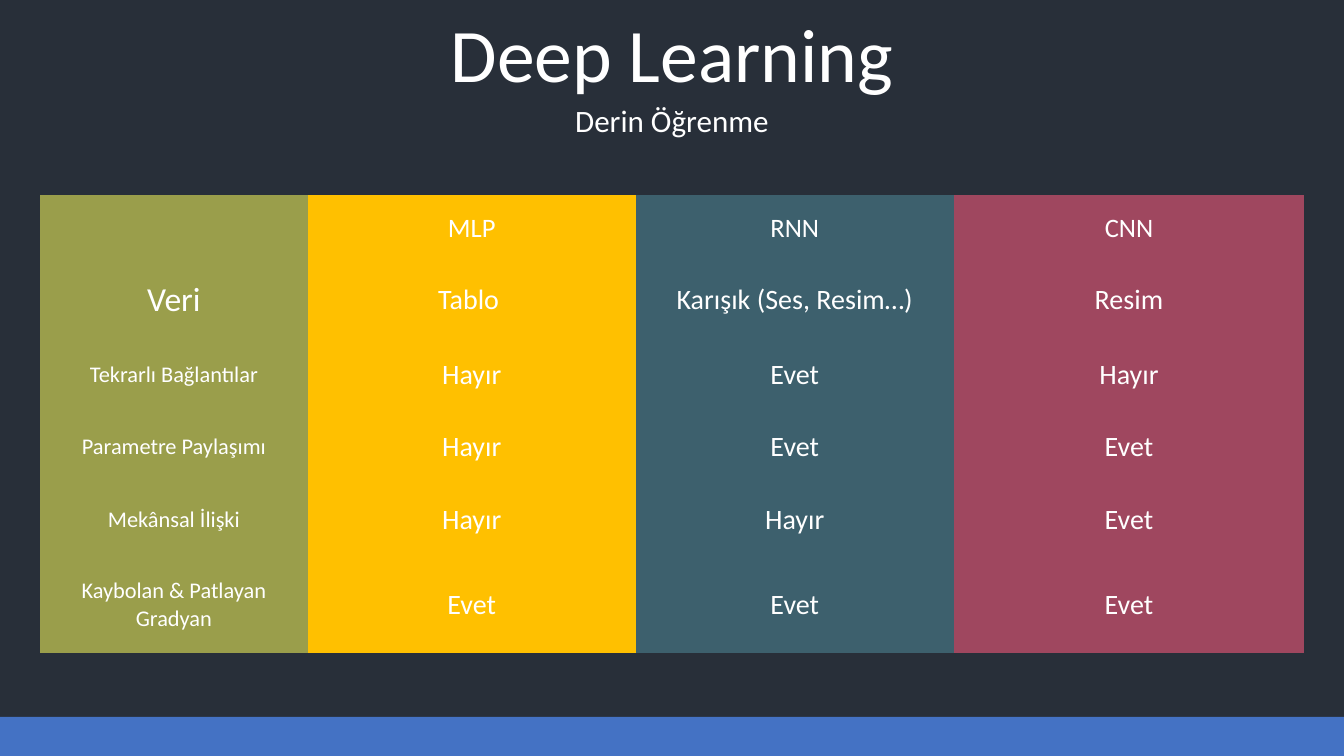
"""Build the Deep Learning comparison slide."""
import pptx
import pptx.dml.color
import pptx.enum.shapes
import pptx.enum.text
import pptx.util

Pt = pptx.util.Pt
RGB = pptx.dml.color.RGBColor
MID = pptx.enum.text.MSO_ANCHOR.MIDDLE
CENTER = pptx.enum.text.PP_ALIGN.CENTER

NIGHT = RGB(0x28, 0x2F, 0x39)
BLUE = RGB(0x44, 0x72, 0xC4)
WHITE = RGB(0xFF, 0xFF, 0xFF)
OLIVE = RGB(0x9A, 0x9E, 0x4B)
GOLD = RGB(0xFF, 0xC0, 0x00)
TEAL = RGB(0x3D, 0x60, 0x6D)
ROSE = RGB(0x9F, 0x47, 0x5F)

FONT = "Calibri"
NO_GRID = "{2D5ABB26-0587-4C30-8999-92F81FD0307C}"
WIDTH, HEIGHT = 960, 540
BAR_TOP = 512

TITLE = "Deep Learning"
SUB = "Derin Öğrenme"
ROWS = [
    ("", "MLP", "RNN", "CNN"),
    ("Veri", "Tablo ", "Karışık (Ses, Resim…)", "Resim"),
    ("Tekrarlı Bağlantılar", "Hayır", "Evet", "Hayır"),
    ("Parametre Paylaşımı", "Hayır", "Evet", "Evet"),
    ("Mekânsal İlişki", "Hayır", "Hayır", "Evet"),
    ("Kaybolan & Patlayan Gradyan", "Evet", "Evet", "Evet"),
]
FILLS = [OLIVE, GOLD, TEAL, ROSE]
WIDTHS = [191.5, 234, 227.5, 250]
HEIGHTS = [47, 55, 52, 52, 52, 69]
LEFT, TOP = 28.5, 139.5
HEAD, BODY, DATA, LABEL = 19, 20, 24, 16


def style(para, size):
    """Center a paragraph and format its runs."""
    para.alignment = CENTER
    for run in para.runs:
        run.font.name = FONT
        run.font.size = Pt(size)
        run.font.color.rgb = WHITE


def caption(shape, text, top, height, size):
    """Place a full-width heading line."""
    shape.left, shape.top = Pt(0), Pt(top)
    shape.width, shape.height = Pt(WIDTH), Pt(height)
    frame = shape.text_frame
    frame.text = text
    frame.word_wrap = True
    frame.auto_size = pptx.enum.text.MSO_AUTO_SIZE.NONE
    frame.vertical_anchor = MID
    para = frame.paragraphs[0]
    para.line_spacing = 0.8
    para.space_before = Pt(10)
    style(para, size)


def rank(row, col):
    """Return the text size for a table cell."""
    if row == 0:
        return HEAD
    if col > 0:
        return BODY
    return DATA if row == 1 else LABEL


def grid(slide):
    """Add the comparison table."""
    frame = slide.shapes.add_table(
        len(ROWS), len(WIDTHS), Pt(LEFT), Pt(TOP),
        Pt(sum(WIDTHS)), Pt(sum(HEIGHTS)))
    table = frame.table
    table.first_row = table.horz_banding = False
    for node in frame.element.iter("{*}tableStyleId"):
        node.text = NO_GRID
    for col, width in zip(table.columns, WIDTHS):
        col.width = Pt(width)
    for row, height in zip(table.rows, HEIGHTS):
        row.height = Pt(height)
    for r, texts in enumerate(ROWS):
        for c, text in enumerate(texts):
            cell = table.cell(r, c)
            cell.fill.solid()
            cell.fill.fore_color.rgb = FILLS[c]
            cell.vertical_anchor = MID
            cell.margin_left = cell.margin_right = Pt(9.5)
            cell.margin_top = cell.margin_bottom = Pt(5)
            cell.text_frame.text = text
            style(cell.text_frame.paragraphs[0], rank(r, c))


def main():
    """Create and save the slide."""
    deck = pptx.Presentation()
    deck.slide_width, deck.slide_height = Pt(WIDTH), Pt(HEIGHT)
    slide = deck.slides.add_slide(deck.slide_layouts[5])
    slide.background.fill.solid()
    slide.background.fill.fore_color.rgb = NIGHT

    bar = slide.shapes.add_shape(
        pptx.enum.shapes.MSO_SHAPE.RECTANGLE,
        Pt(0), Pt(BAR_TOP), Pt(WIDTH), Pt(HEIGHT - BAR_TOP))
    bar.shadow.inherit = False
    bar.fill.solid()
    bar.fill.fore_color.rgb = BLUE
    bar.line.fill.background()

    caption(slide.shapes.title, TITLE, 13, 60.5, 54)
    sub = slide.shapes.add_textbox(0, 0, 0, 0)
    caption(sub, SUB, 73.5, 30, 22.2)
    grid(slide)
    deck.save("out.pptx")


if __name__ == "__main__":
    main()
